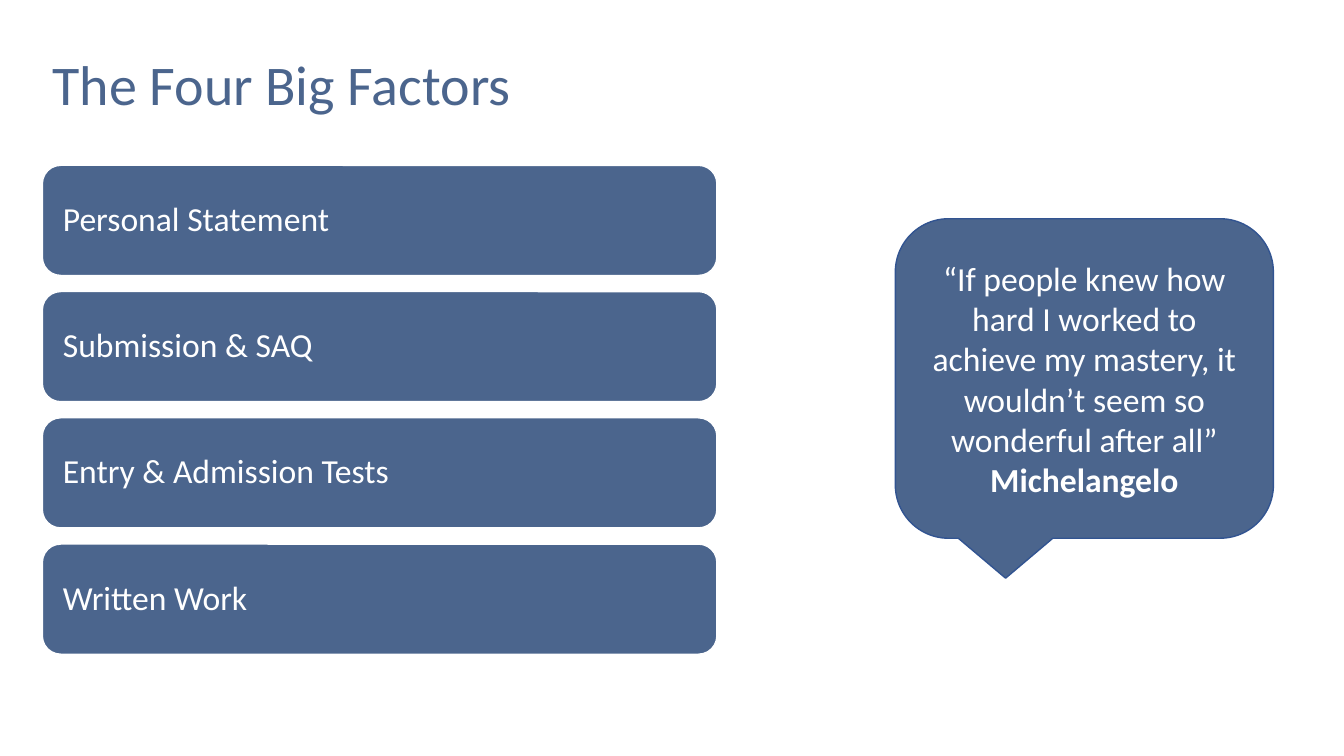
from pptx import Presentation
from pptx.dml.color import RGBColor
from pptx.enum.shapes import MSO_SHAPE
from pptx.enum.text import MSO_ANCHOR, PP_ALIGN
from pptx.util import Inches, Pt

SLATE, EDGE, WHITE = "4B658D", "325491", "FFFFFF"
FACTORS = ["Personal Statement", "Submission & SAQ", "Entry & Admission Tests", "Written Work"]
QUOTE = ("“If people knew how hard I worked to achieve my mastery, "
         "it wouldn’t seem so wonderful after all”")
AUTHOR = "Michelangelo"


def colour(hex_value):
    return RGBColor.from_string(hex_value)


def format_runs(paragraph, size, hex_value):
    for run in paragraph.runs:
        run.font.name = "Calibri"
        run.font.size = Pt(size)
        run.font.color.rgb = colour(hex_value)


def add_panel(slide, kind, box, edge, text, align):
    """Add a filled shape with text; box is left, top, width, height in inches."""
    panel = slide.shapes.add_shape(kind, *map(Inches, box))
    panel.shadow.inherit = False
    panel.fill.solid()
    panel.fill.fore_color.rgb = colour(SLATE)
    panel.line.color.rgb = colour(edge)
    panel.line.width = Pt(1)
    frame = panel.text_frame
    frame.word_wrap = True
    frame.vertical_anchor = MSO_ANCHOR.MIDDLE
    paragraph = frame.paragraphs[0]
    paragraph.text = text
    paragraph.alignment = align
    format_runs(paragraph, 24, WHITE)
    return frame


def add_heading(slide, box):
    heading = slide.shapes.title
    heading.left, heading.top, heading.width, heading.height = map(Inches, box)
    frame = heading.text_frame
    frame.text = "The Four Big Factors"
    frame.word_wrap = True
    frame.vertical_anchor = MSO_ANCHOR.TOP
    frame.paragraphs[0].alignment = PP_ALIGN.LEFT
    format_runs(frame.paragraphs[0], 40, SLATE)


def add_factors(slide, box, gap):
    left, top, width, height = box
    bar_height = (height - gap * (len(FACTORS) - 1)) / len(FACTORS)
    for index, factor in enumerate(FACTORS):
        bar_top = top + index * (bar_height + gap)
        frame = add_panel(slide, MSO_SHAPE.ROUNDED_RECTANGLE,
                          (left, bar_top, width, bar_height), WHITE, factor, PP_ALIGN.LEFT)
        frame.margin_left = frame.margin_right = Inches(0.15)
        frame.paragraphs[0].line_spacing = 0.9


def add_quote(slide, box):
    frame = add_panel(slide, MSO_SHAPE.ROUNDED_RECTANGULAR_CALLOUT, box, EDGE,
                      f"{QUOTE}\n{AUTHOR}", PP_ALIGN.CENTER)
    frame.paragraphs[0].runs[-1].font.bold = True


def main():
    deck = Presentation()
    deck.slide_width, deck.slide_height = Inches(13.33), Inches(7.5)
    slide = deck.slides.add_slide(deck.slide_layouts[5])
    add_heading(slide, (0.42, 0.44, 5.37, 0.77))
    add_factors(slide, (0.42, 1.64, 6.69, 4.85), gap=0.16)
    add_quote(slide, (8.88, 2.17, 3.75, 3.17))
    deck.save("out.pptx")


if __name__ == "__main__":
    main()
